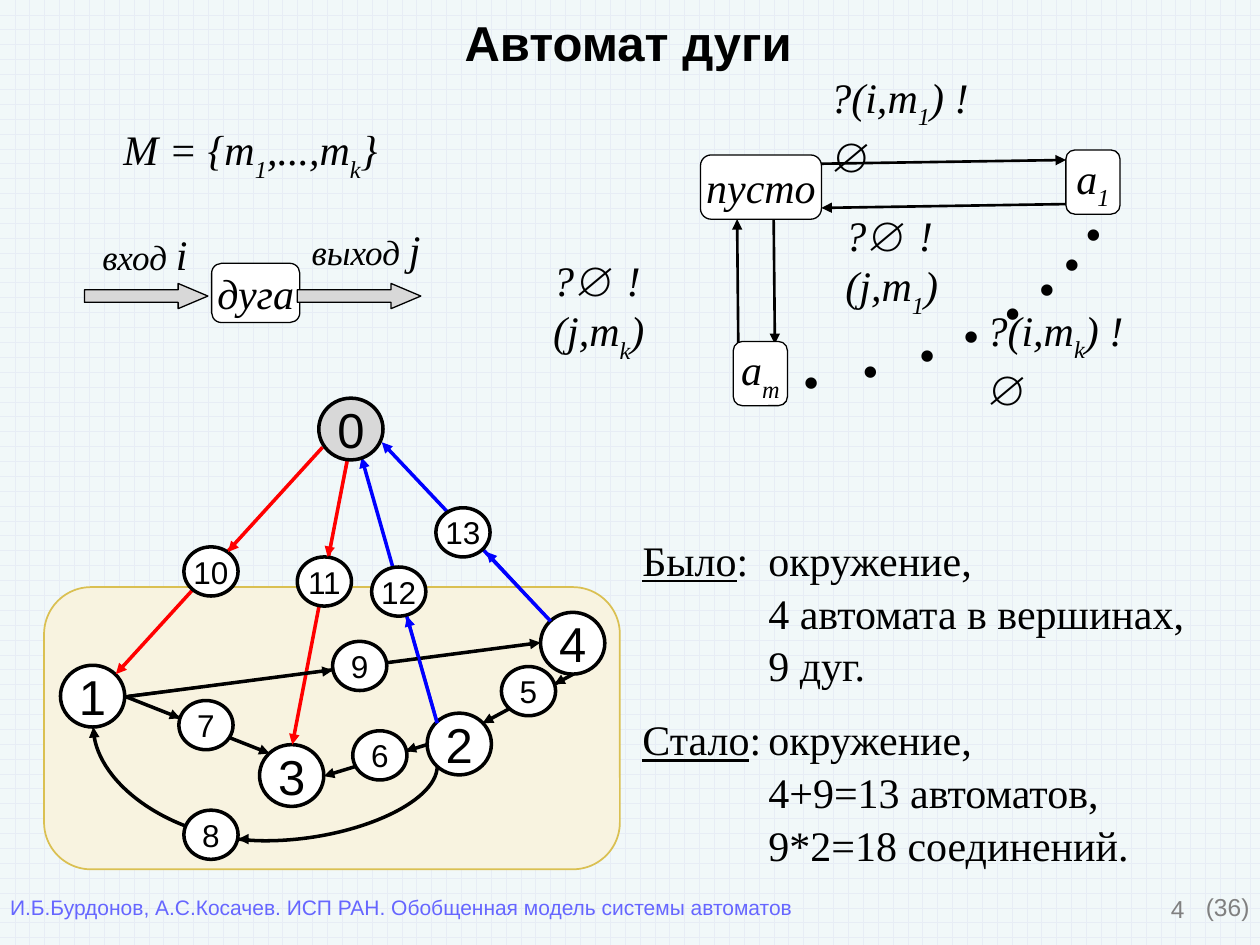
from lxml.etree import SubElement
from pptx import Presentation
from pptx.dml.color import RGBColor
from pptx.enum.dml import MSO_PATTERN
from pptx.enum.shapes import MSO_CONNECTOR, MSO_SHAPE
from pptx.enum.text import MSO_ANCHOR, PP_ALIGN
from pptx.oxml.ns import qn
from pptx.util import Inches, Pt

SERIF, SANS = "Times New Roman", "Arial"
BLACK, WHITE, GREY, RED, BLUE = "000000", "FFFFFF", "D8D8D8", "FF0000", "0000FF"
ITALIC = {"italic": True}
SUB = {"italic": True, "sub": True}
LARGE, SMALL = (0.51, 0.49, 28), (0.43, 0.39, 18)

TITLE = "Автомат дуги"
FOOTERS = [
    (7.17, 7.1, 2.23, 0.23, "4", 14, "808080", PP_ALIGN.RIGHT),
    (9.57, 7.08, 0.35, 0.23, "(36)", 14, "808080", PP_ALIGN.LEFT),
    (0.08, 7.1, 6.27, 0.2, "И.Б.Бурдонов, А.С.Косачев. ИСП РАН. Обобщенная модель системы автоматов",
     12, "6666FF", PP_ALIGN.LEFT),
]
TRANSITION_LABELS = [
    (6.59, 0.8, 0.4, "?(i,m", "1", ") !∅", MSO_ANCHOR.MIDDLE),
    (6.71, 1.66, 0.47, "?∅ !(j,m", "1", ")", MSO_ANCHOR.TOP),
    (7.83, 2.65, 0.4, "?(i,m", "k", ") !∅", MSO_ANCHOR.MIDDLE),
    (4.39, 2.02, 0.47, "?∅ !(j,m", "k", ")", MSO_ANCHOR.TOP),
]
STATES = [
    (8.46, 1.19, 0.43, 0.51, [("a", ITALIC), ("1", SUB)]),
    (5.56, 1.23, 0.96, 0.51, [("пусто", ITALIC)]),
    (5.82, 2.71, 0.43, 0.51, [("a", ITALIC), ("т", SUB)]),
    (1.68, 2.09, 0.7, 0.47, [("дуга", ITALIC)]),
]
TRANSITIONS = [
    (6.48, 1.3, 8.46, 1.27), (8.46, 1.62, 6.52, 1.65),
    (6.14, 1.7, 6.15, 2.73), (5.86, 2.77, 5.85, 1.74),
]
DOTS = [(8.58, 1.7), (8.41, 1.94), (8.21, 2.14), (7.94, 2.33),
        (7.61, 2.51), (7.26, 2.66), (6.81, 2.79), (6.34, 2.88)]
ARC_ENDS = [(0.67, 0.77, 1.78, 0.76, "вход ", "i"), (2.36, 2.43, 1.74, 0.95, "выход ", "j")]
ALPHABET = [("M = {m", ITALIC), ("1", SUB), (",...,m", ITALIC), ("k", SUB), ("}", ITALIC)]
VERTICES = [("1", 0.48, 5.28), ("2", 3.39, 5.66), ("3", 2.06, 5.91), ("4", 4.29, 4.86)]
ENVIRONMENT = ("0", 2.53, 3.16)
ARC_NODES = [
    ("5", 3.98, 5.29), ("6", 2.8, 5.8), ("7", 1.42, 5.56), ("8", 1.46, 6.43), ("9", 2.64, 5.09),
    ("10", 1.46, 4.34), ("11", 2.36, 4.42), ("12", 2.95, 4.5), ("13", 3.46, 4.03),
]
ARCS = [
    (2.56, 3.55, 0.92, 5.35, RED), (2.76, 3.63, 2.32, 5.91, RED),
    (3.47, 5.74, 2.87, 3.63, BLUE), (4.37, 4.93, 3.03, 3.51, BLUE),
    (1, 5.53, 2.14, 5.98, BLACK), (1, 5.53, 4.29, 5.1, BLACK),
    (4.55, 5.35, 3.83, 5.74, BLACK), (3.39, 5.91, 2.57, 6.16, BLACK),
]
ARC_ENTRIES = [
    (4.37, 4.93, 3.86, 4.38, BLUE, 1.5), (3.47, 5.73, 3.23, 4.89, BLUE, 1.5),
    (2.52, 3.59, 1.81, 4.38, RED, 1), (2.76, 3.67, 2.6, 4.42, RED, 1),
    (1.02, 5.52, 2.64, 5.32, BLACK, 1), (1.03, 5.54, 1.43, 5.7, BLACK, 1),
    (3.37, 5.91, 3.22, 5.96, BLACK, 1), (4.53, 5.36, 4.4, 5.43, BLACK, 1),
    (1.97, 6.66, 1.89, 6.66, BLACK, 0.75),
]
SUMMARY = [
    ("Было", ":\tокружение,", 0), ("", "\t4 автомата в вершинах,", 0), ("", "\t9 дуг.", 12),
    ("Стало", ":\tокружение,", 0), ("", "\t4+9=13 автоматов,", 0), ("", "\t9*2=18 соединений.", 0),
]


def rgb(value):
    return RGBColor.from_string(value)


def add_runs(paragraph, runs, size=24, face=SERIF, color=BLACK):
    for text, style in runs:
        run = paragraph.add_run()
        run.text = text
        font = run.font
        font.name, font.size = face, Pt(style.get("size", size))
        font.color.rgb = rgb(color)
        font.bold, font.italic = style.get("bold"), style.get("italic")
        font.underline = style.get("underline")
        if style.get("sub"):
            font._element.set("baseline", "-30000")


def set_frame(shape, anchor=MSO_ANCHOR.MIDDLE, wrap=False, inset=0):
    frame = shape.text_frame
    frame.word_wrap, frame.vertical_anchor = wrap, anchor
    frame.margin_left = frame.margin_right = Inches(inset)
    frame.margin_top = frame.margin_bottom = Inches(inset)
    return frame


def add_label(slide, box, runs, align=PP_ALIGN.LEFT, anchor=MSO_ANCHOR.MIDDLE, wrap=False, **font):
    label = slide.shapes.add_textbox(*map(Inches, box))
    paragraph = set_frame(label, anchor, wrap).paragraphs[0]
    paragraph.alignment = align
    add_runs(paragraph, runs, **font)


def add_outline(slide, kind, box, fill, line=BLACK, width=0.75, runs=(), **font):
    shape = slide.shapes.add_shape(kind, *map(Inches, box))
    shape.shadow.inherit = False
    shape.fill.solid()
    shape.fill.fore_color.rgb = rgb(fill)
    shape.line.color.rgb = rgb(line)
    shape.line.width = Pt(width)
    paragraph = set_frame(shape).paragraphs[0]
    paragraph.alignment = PP_ALIGN.CENTER
    add_runs(paragraph, runs, **font)
    return shape


def add_arrow(slide, ends, color=BLACK, width=1.5, kind=MSO_CONNECTOR.STRAIGHT):
    arrow = slide.shapes.add_connector(kind, *map(Inches, ends))
    arrow.line.color.rgb = rgb(color)
    arrow.line.width = Pt(width)
    properties = arrow._element.spPr
    SubElement(properties.find(qn("a:ln")), qn("a:tailEnd"), type="triangle")
    SubElement(properties, qn("a:effectLst"))
    return properties


def add_node(slide, node, scale, fill=WHITE):
    name, left, top = node
    width, height, size = scale
    add_outline(slide, MSO_SHAPE.OVAL, (left, top, width, height), fill, width=2,
                runs=[(name, {})], size=size, face=SANS)


def add_title(slide):
    title = slide.shapes.title
    title.left, title.top, title.width, title.height = map(Inches, (0.2, 0, 9.57, 0.67))
    paragraph = set_frame(title, wrap=True, inset=0.1).paragraphs[0]
    paragraph.alignment = PP_ALIGN.CENTER
    add_runs(paragraph, [(TITLE, {"bold": True})], 28, SANS)


def add_arc_automaton(slide):
    for ends in TRANSITIONS:
        add_arrow(slide, ends)
    for left, top, height, before, index, after, anchor in TRANSITION_LABELS:
        add_label(slide, (left, top, 1.25, height),
                  [(before, ITALIC), (index, SUB), (after, ITALIC)], anchor=anchor, wrap=True)
    for *box, runs in STATES:
        add_outline(slide, MSO_SHAPE.ROUNDED_RECTANGLE, box, WHITE, runs=runs)
    for left, top in DOTS:
        add_label(slide, (left + 0.04, top, 0.55, 0.29), [("•", {"bold": True})])
    for arrow_left, left, top, width, word, index in ARC_ENDS:
        arrow = add_outline(slide, MSO_SHAPE.RIGHT_ARROW, (arrow_left, 2.25, 0.98, 0.2), GREY)
        arrow.adjustments[1] = 1.18
        add_label(slide, (left, top, width, 0.47),
                  [(word, {"italic": True, "size": 20}), (index, ITALIC)], PP_ALIGN.CENTER)
    add_label(slide, (0.98, 1.02, 2.13, 0.4), ALPHABET)


def add_graph(slide):
    add_outline(slide, MSO_SHAPE.ROUNDED_RECTANGLE, (0.35, 4.66, 4.57, 2.24), "F8F3E0", "DAC052", 1)
    for vertex in VERTICES:
        add_node(slide, vertex, LARGE)
    for *ends, color in ARCS:
        add_arrow(slide, ends, color, 2)
    curve = add_arrow(slide, (1.95, 7.29, 2.26, 4.56), width=2, kind=MSO_CONNECTOR.CURVE)
    curve.find(qn("a:xfrm")).set("rot", "16200000")
    guides = curve.find(qn("a:prstGeom")).find(qn("a:avLst"))
    SubElement(guides, qn("a:gd"), name="adj1", fmla="val -191600")
    add_node(slide, ENVIRONMENT, LARGE, GREY)
    for node in ARC_NODES:
        add_node(slide, node, SMALL)
    for *ends, color, width in ARC_ENTRIES:
        add_arrow(slide, ends, color, width)


def add_summary(slide):
    summary = slide.shapes.add_textbox(*map(Inches, (5, 4.17, 4.8, 2.69)))
    frame = summary.text_frame
    frame.word_wrap = True
    for number, (heading, detail, gap) in enumerate(SUMMARY):
        paragraph = frame.add_paragraph() if number else frame.paragraphs[0]
        paragraph.line_spacing, paragraph.space_after = 1.05, Pt(gap)
        tabs = SubElement(paragraph._p.get_or_add_pPr(), qn("a:tabLst"))
        SubElement(tabs, qn("a:tab"), pos=str(Inches(1)), algn="l")
        runs = [(heading, {"underline": True})] if heading else []
        add_runs(paragraph, runs + [(detail, {})])


def main():
    """Build the slide about the arc automaton."""
    deck = Presentation()
    deck.slide_width, deck.slide_height = Inches(10), Inches(7.5)
    slide = deck.slides.add_slide(deck.slide_layouts[5])
    backdrop = slide.background.fill
    backdrop.patterned()
    backdrop.pattern = MSO_PATTERN.HORIZONTAL_BRICK
    backdrop.fore_color.rgb, backdrop.back_color.rgb = rgb("E7EDF5"), rgb("F1F8F9")
    for *box, text, size, color, align in FOOTERS:
        add_label(slide, box, [(text, {})], align, size=size, face=SANS, color=color,
                  wrap=align == PP_ALIGN.RIGHT)
    add_title(slide)
    add_arc_automaton(slide)
    add_graph(slide)
    add_summary(slide)
    deck.save("out.pptx")


if __name__ == "__main__":
    main()
